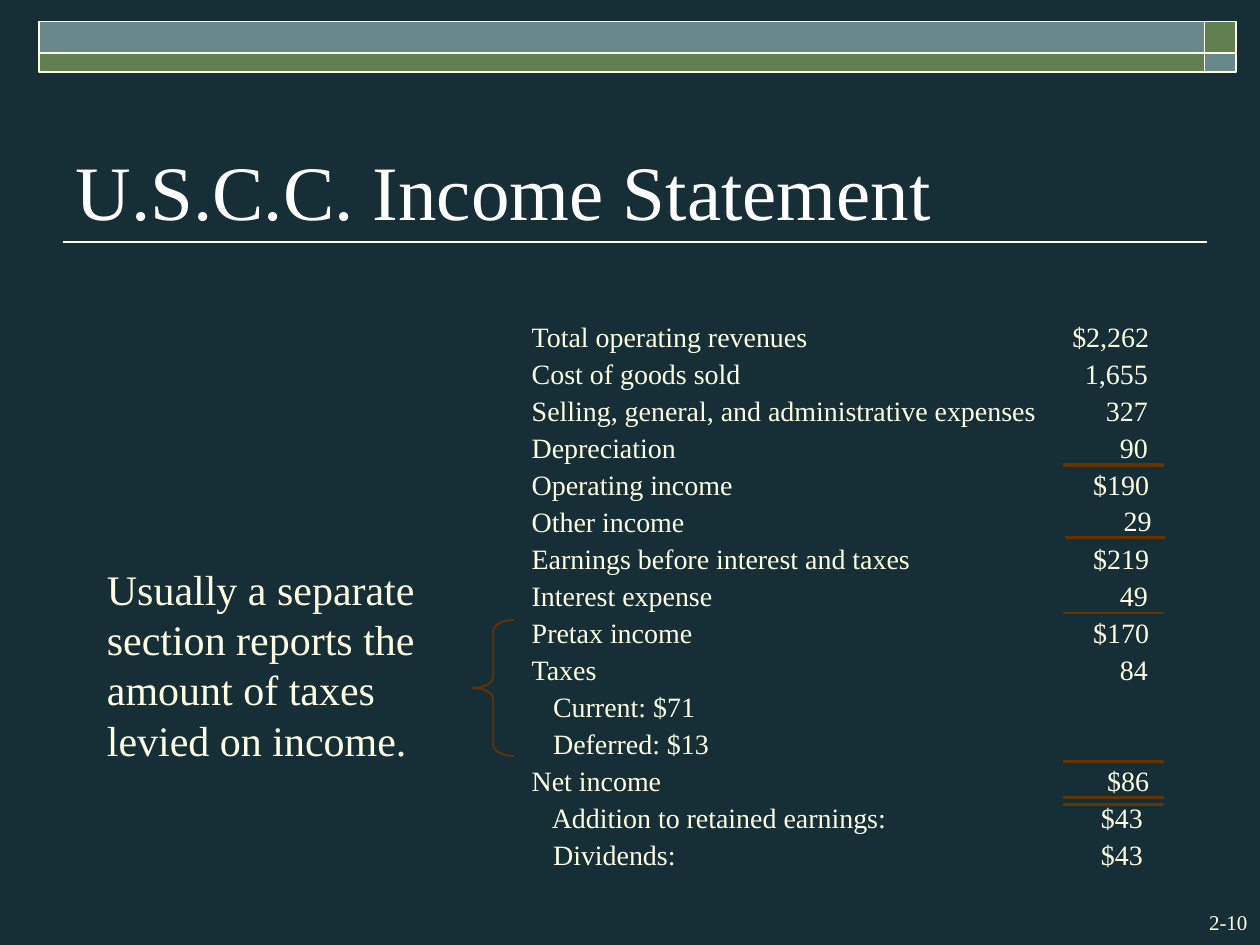
import pptx
import pptx.util
from pptx.dml.color import RGBColor
from pptx.enum.shapes import MSO_CONNECTOR, MSO_SHAPE
from pptx.enum.text import MSO_ANCHOR, MSO_AUTO_SIZE, PP_ALIGN
from pptx.oxml.ns import qn
from pptx.util import Inches, Pt

NIGHT = RGBColor(0x16, 0x2E, 0x36)
CREAM = RGBColor(0xFF, 0xFF, 0xE3)
WHITE = RGBColor(0xFF, 0xFF, 0xFF)
BLACK = RGBColor(0x00, 0x00, 0x00)
GREEN = RGBColor(0x61, 0x80, 0x52)
SLATE = RGBColor(0x69, 0x88, 0x8B)
BROWN = RGBColor(0x66, 0x33, 0x00)
FONT = "Times New Roman"

TITLE = "U.S.C.C. Income Statement"
NOTE = "Usually a separate section reports the amount of taxes levied on income."
PAGE_NUMBER = "2-10"

# label, label indent, amount, right edge of the amount
STATEMENT = [
    ("Total operating revenues", 0, "$2,262", 9.12),
    ("Cost of goods sold", 0, "1,655", 9.11),
    ("Selling, general, and administrative expenses", 0, "327", 9.11),
    ("Depreciation", 0, "90", 9.11),
    ("Operating income", 0, "$190", 9.12),
    ("Other income", 0, "29", 9.14),
    ("Earnings before interest and taxes", 0, "$219", 9.12),
    ("Interest expense", 0, "49", 9.11),
    ("Pretax income", 0, "$170", 9.12),
    ("Taxes", 0, "84", 9.11),
    ("Current: $71", 0.17, None, None),
    ("Deferred: $13", 0.17, None, None),
    ("Net income", 0, "$86", 9.12),
    ("Addition to retained earnings:", 0.16, "$43", 9.07),
    ("Dividends:", 0.17, "$43", 9.07),
]
LABEL_LEFT, LABEL_WIDTH, AMOUNT_WIDTH = 4.22, 4.15, 0.7
FIRST_ROW, LAST_ROW, ROW_HEIGHT = 2.54, 6.65, 0.27
ROW_STEP = (LAST_ROW - FIRST_ROW) / (len(STATEMENT) - 1)

# left and top of each rule under the amounts
SUM_RULES = [(8.44, 3.68), (8.44, 3.69), (8.46, 4.26), (8.44, 4.86),
             (8.44, 6.04), (8.44, 6.32), (8.44, 6.38)]

# columns and rows of the banner: start, size
BANNER_COLUMNS = [(0.31, 9.25), (9.56, 0.25)]
BANNER_ROWS = [(0.17, 0.25), (0.42, 0.15)]


def write(box, text, size, color=CREAM, align=PP_ALIGN.LEFT, margins=None,
          anchor=MSO_ANCHOR.TOP):
    frame = box.text_frame
    settings = {"word_wrap": True, "auto_size": MSO_AUTO_SIZE.NONE,
                "vertical_anchor": anchor}
    if margins is not None:
        for side in ("left", "top", "right", "bottom"):
            settings["margin_" + side] = Inches(margins)
    for name, value in settings.items():
        setattr(frame, name, value)
    para = frame.paragraphs[0]
    para.alignment = align
    span = para.add_run()
    span.text = text
    for name, value in {"name": FONT, "size": Pt(size), "bold": False}.items():
        setattr(span.font, name, value)
    span.font.color.rgb = color


def add_text(page, place, text, size, **options):
    box = page.shapes.add_textbox(*map(Inches, place))
    write(box, text, size, **options)


def add_figure(page, kind, place, fill, line, width):
    figure = page.shapes.add_shape(kind, *map(Inches, place))
    figure.shadow.inherit = False
    if fill is None:
        figure.fill.background()
    else:
        figure.fill.solid()
        figure.fill.fore_color.rgb = fill
    figure.line.color.rgb = line
    figure.line.width = Pt(width)
    return figure


def add_line(page, ends, color, width):
    line = page.shapes.add_connector(MSO_CONNECTOR.STRAIGHT, *map(Inches, ends))
    line.line.color.rgb = color
    line.line.width = Pt(width)
    properties = line._element.spPr
    properties.append(properties.makeelement(qn("a:effectLst"), {}))


def add_banner(page):
    add_line(page, (0.5, 1.92, 9.58, 1.92), CREAM, 1)
    for row, (top, height) in enumerate(BANNER_ROWS):
        for column, (left, width) in enumerate(BANNER_COLUMNS):
            fill = SLATE if row == column else GREEN
            add_figure(page, MSO_SHAPE.RECTANGLE, (left, top, width, height),
                       fill, CREAM, 1)


def add_statement(page):
    for row, (label, indent, amount, right) in enumerate(STATEMENT):
        top = FIRST_ROW + row * ROW_STEP
        add_text(page, (LABEL_LEFT + indent, top, LABEL_WIDTH - indent, ROW_HEIGHT),
                 label, 16, margins=0)
        if amount:
            # The other income figure sits slightly above its row
            lift = 0.01 if amount == "29" else 0
            add_text(page, (right - AMOUNT_WIDTH, top - lift, AMOUNT_WIDTH, ROW_HEIGHT),
                     amount, 16, align=PP_ALIGN.RIGHT, margins=0)
    for left, top in SUM_RULES:
        add_figure(page, MSO_SHAPE.RECTANGLE, (left, top, 0.79, 0.01),
                   BLACK, BROWN, 0.75)
    add_line(page, (8.44, 6.33, 9.24, 6.33), BROWN, 0)


def main():
    deck = pptx.Presentation()
    deck.slide_width, deck.slide_height = Inches(10), Inches(7.5)
    page = deck.slides.add_slide(deck.slide_layouts.get_by_name("Title Only"))
    page.background.fill.solid()
    page.background.fill.fore_color.rgb = NIGHT

    title = page.shapes.title
    place = {"left": 0.5, "top": 0.67, "width": 9, "height": 1.25}
    for name, value in place.items():
        setattr(title, name, Inches(value))
    write(title, TITLE, 44, color=WHITE, anchor=MSO_ANCHOR.BOTTOM)

    add_banner(page)
    add_statement(page)
    brace = add_figure(page, MSO_SHAPE.LEFT_BRACE, (3.75, 4.92, 0.33, 1.08),
                       None, BROWN, 1)
    brace.adjustments[0] = 0.27
    add_text(page, (0.75, 4.42, 2.75, 1.7), NOTE, 24)
    add_text(page, (9.17, 7.17, 0.83, 0.3), PAGE_NUMBER, 12, align=PP_ALIGN.RIGHT)
    deck.save("out.pptx")


if __name__ == "__main__":
    main()
